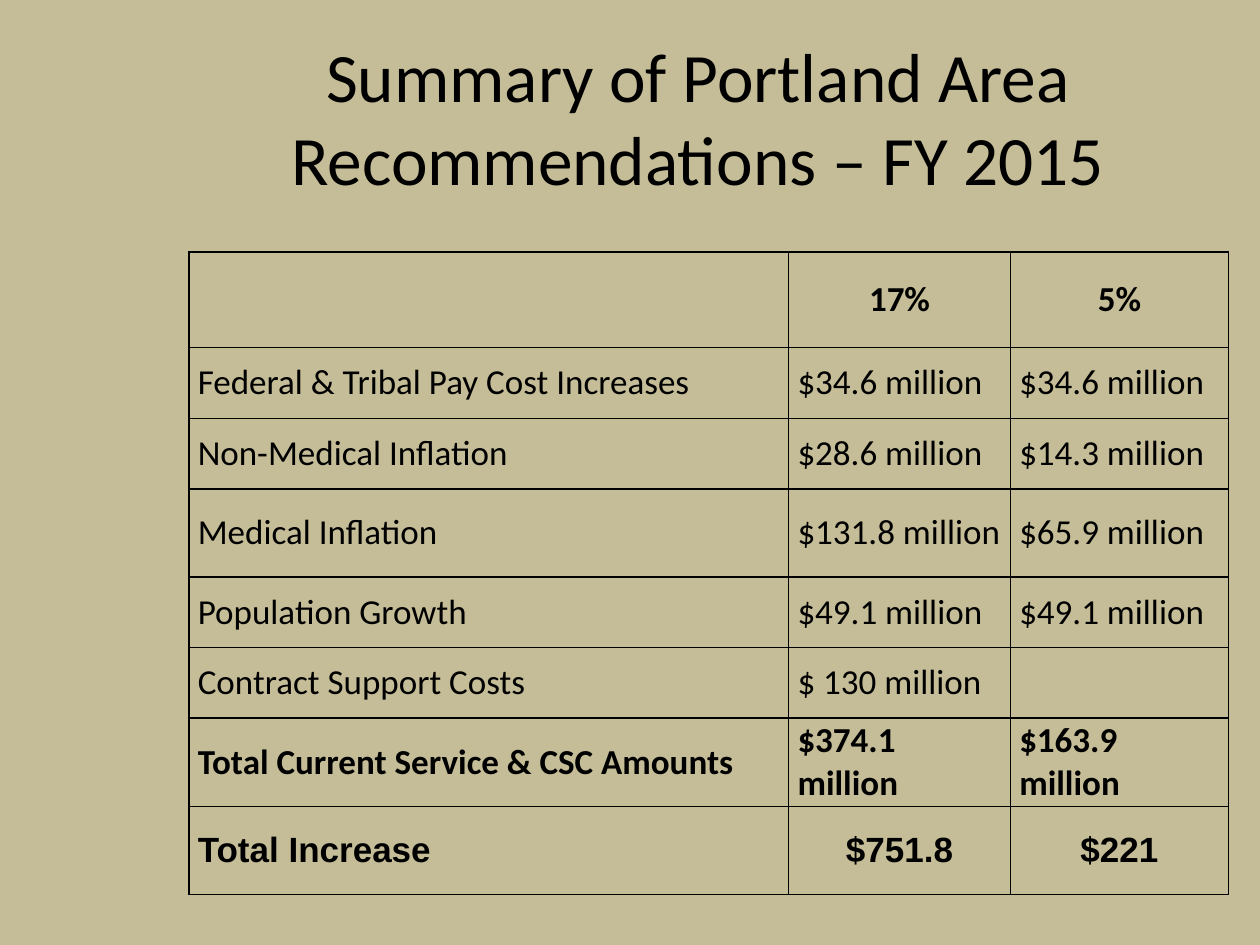
import lxml.etree
import pptx
import pptx.dml.color
import pptx.enum.text
import pptx.oxml.ns
import pptx.util

BLACK = pptx.dml.color.RGBColor(0x00, 0x00, 0x00)
SAND = pptx.dml.color.RGBColor(0xC4, 0xBD, 0x97)
ALIGN = pptx.enum.text.PP_ALIGN
MIDDLE = pptx.enum.text.MSO_ANCHOR.MIDDLE

COLUMN_WIDTHS = (47.6, 17.6, 17.3)
ROW_HEIGHTS = (7.6, 5.6, 5.6, 7, 5.6, 5.6, 7, 7)
CENTRED_ROWS = (0, 7)
BOLD_ROWS = (0, 6, 7)
RECOMMENDATIONS = (
    ("", "17%", "5%"),
    ("Federal & Tribal Pay Cost Increases", "$34.6 million", "$34.6 million"),
    ("Non-Medical Inflation", "$28.6 million", "$14.3 million"),
    ("Medical Inflation", "$131.8 million", "$65.9 million"),
    ("Population Growth", "$49.1 million", "$49.1 million"),
    ("Contract Support Costs", "$ 130 million", ""),
    ("Total Current Service & CSC Amounts", "$374.1 million", "$163.9 million"),
    ("Total Increase", "$751.8", "$221"),
)


class SlideBuilder:
    """Draws styled elements on one slide, placed on a grid of 100 columns by 75 rows."""

    def __init__(self, presentation):
        self.column = presentation.slide_width / 100
        self.row = presentation.slide_height / 75
        self.slide = presentation.slides.add_slide(presentation.slide_layouts[6])

    def background(self, color):
        fill = self.slide.background.fill
        fill.solid()
        fill.fore_color.rgb = color

    def place(self, left, top, width, height):
        return (round(left * self.column), round(top * self.row),
                round(width * self.column), round(height * self.row))

    def text(self, paragraph, content, align, **font_format):
        paragraph.alignment = align
        font = paragraph.font
        if content:
            run = paragraph.add_run()
            run.text = content
            font = run.font
        font.color.rgb = BLACK
        for name, value in font_format.items():
            setattr(font, name, value)

    def title(self, content, *area):
        frame = self.slide.shapes.add_textbox(*self.place(*area)).text_frame
        for name, value in {"word_wrap": True, "vertical_anchor": MIDDLE}.items():
            setattr(frame, name, value)
        self.text(frame.paragraphs[0], content, ALIGN.CENTER,
                  name="Calibri", size=pptx.util.Pt(39.6))

    def border(self, cell):
        properties = cell._tc.get_or_add_tcPr()
        for index, side in enumerate(("lnL", "lnR", "lnT", "lnB")):
            line = lxml.etree.Element(pptx.oxml.ns.qn(f"a:{side}"), w=str(pptx.util.Pt(1)))
            fill = lxml.etree.SubElement(line, pptx.oxml.ns.qn("a:solidFill"))
            lxml.etree.SubElement(fill, pptx.oxml.ns.qn("a:srgbClr"), val=str(BLACK))
            properties.insert(index, line)

    def cell(self, cell, content, align, **font_format):
        cell.fill.background()
        margin = pptx.util.Inches(0.07)
        cell_format = {"vertical_anchor": MIDDLE, "margin_left": margin,
                       "margin_right": margin, "margin_top": 0, "margin_bottom": 0}
        for name, value in cell_format.items():
            setattr(cell, name, value)
        paragraph = cell.text_frame.paragraphs[0]
        paragraph.space_after = pptx.util.Pt(11)
        self.text(paragraph, content, align, size=pptx.util.Pt(20), **font_format)
        self.border(cell)

    def table(self, rows, left, top):
        area = self.place(left, top, sum(COLUMN_WIDTHS), sum(ROW_HEIGHTS))
        table = self.slide.shapes.add_table(len(rows), len(COLUMN_WIDTHS), *area).table
        for name in ("first_row", "horz_banding"):
            setattr(table, name, False)
        for column, width in zip(table.columns, COLUMN_WIDTHS):
            column.width = round(width * self.column)
        for row, height in zip(table.rows, ROW_HEIGHTS):
            row.height = round(height * self.row)
        last = len(rows) - 1
        for row_index, contents in enumerate(rows):
            for column_index, content in enumerate(contents):
                centred = row_index in CENTRED_ROWS and column_index > 0
                self.cell(table.cell(row_index, column_index), content,
                          ALIGN.CENTER if centred else ALIGN.LEFT,
                          name="Arial" if row_index == last else "Calibri",
                          bold=row_index in BOLD_ROWS)


def main():
    presentation = pptx.Presentation()
    presentation.slide_width = pptx.util.Inches(10)
    presentation.slide_height = pptx.util.Inches(7.5)
    builder = SlideBuilder(presentation)
    builder.background(SAND)
    builder.title("Summary of Portland Area Recommendations – FY 2015", 15.8, 3, 79.2, 12.5)
    builder.table(RECOMMENDATIONS, 15, 20)
    presentation.save("out.pptx")


if __name__ == "__main__":
    main()
